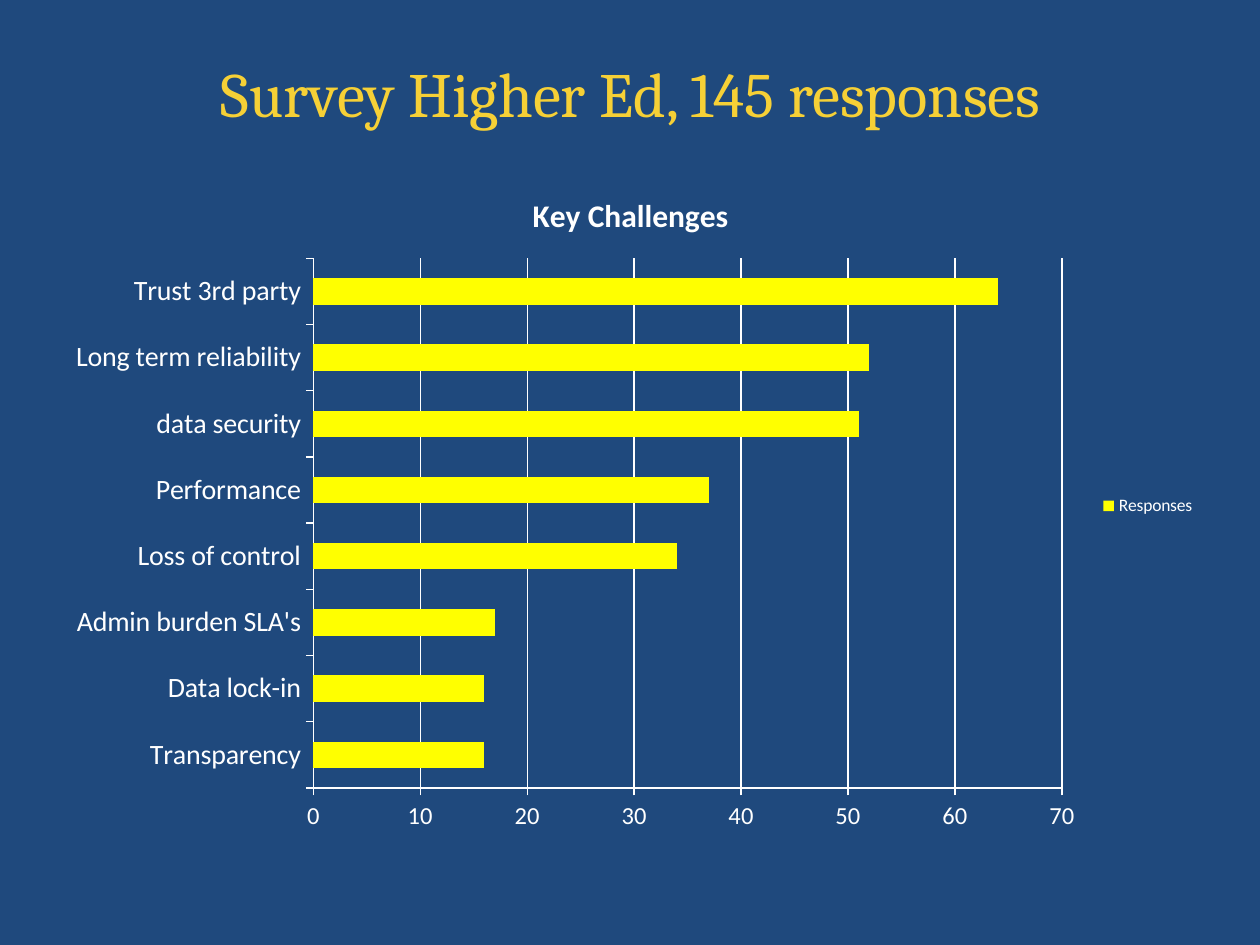
from pptx import Presentation
from pptx.chart.data import CategoryChartData
from pptx.dml.color import RGBColor
from pptx.enum.chart import XL_CHART_TYPE, XL_LEGEND_POSITION, XL_TICK_MARK
from pptx.enum.text import MSO_ANCHOR, PP_ALIGN
from pptx.util import Inches, Pt


def paint(target, color):
    target.solid()
    target.fore_color.rgb = RGBColor.from_string(color)


def style_font(font, name, size, color, bold=False):
    font.name = name
    font.size = Pt(size)
    font.bold = bold
    paint(font.fill, color)


deck = Presentation()
deck.slide_width = Inches(10)
deck.slide_height = Inches(7.5)
page = deck.slides.add_slide(deck.slide_layouts[5])
paint(page.background.fill, "1F497D")

title = page.shapes.title
title.left, title.top = Inches(0.42), Inches(0.3)
title.width, title.height = Inches(9.17), Inches(0.87)
title.text_frame.text = "Survey Higher Ed, 145 responses"
title.text_frame.vertical_anchor = MSO_ANCHOR.MIDDLE
heading = title.text_frame.paragraphs[0]
heading.alignment = PP_ALIGN.CENTER
style_font(heading.font, "Cambria", 36, "F6D036")

challenges = {
    "Transparency": 16,
    "Data lock-in": 16,
    "Admin burden SLA's": 17,
    "Loss of control": 34,
    "Performance": 37,
    "data security": 51,
    "Long term reliability": 52,
    "Trust 3rd party": 64,
}
survey = CategoryChartData()
survey.categories = list(challenges)
survey.add_series("Responses", list(challenges.values()))
chart = page.shapes.add_chart(
    XL_CHART_TYPE.BAR_CLUSTERED, Inches(0.42), Inches(1.33), Inches(9.17), Inches(5.37), survey
).chart
style_font(chart.font, "Calibri", 10, "FFFFFF")

chart.has_title = True
chart.chart_title.include_in_layout = False
chart.chart_title.text_frame.text = "Key Challenges"
style_font(chart.chart_title.text_frame.paragraphs[0].font, "Calibri", 18, "FFFFFF", True)

chart.has_legend = True
chart.legend.position = XL_LEGEND_POSITION.RIGHT
chart.legend.include_in_layout = False
style_font(chart.legend.font, "Calibri", 10, "FFFFFF")

plot = chart.plots[0]
plot.gap_width = 150
plot.vary_by_categories = False
paint(plot.series[0].format.fill, "FFFF00")

value_axis = chart.value_axis
value_axis.minimum_scale = 0
value_axis.maximum_scale = 70
value_axis.major_unit = 10
value_axis.has_major_gridlines = True
paint(value_axis.major_gridlines.format.line.fill, "FFFFFF")
value_axis.major_gridlines.format.line.width = Pt(0.75)
for axis, size in ((chart.category_axis, 16), (value_axis, 14)):
    axis.major_tick_mark = XL_TICK_MARK.OUTSIDE
    axis.minor_tick_mark = XL_TICK_MARK.NONE
    paint(axis.format.line.fill, "FFFFFF")
    axis.format.line.width = Pt(0.75)
    style_font(axis.tick_labels.font, "Calibri", size, "FFFFFF")

deck.save("out.pptx")
